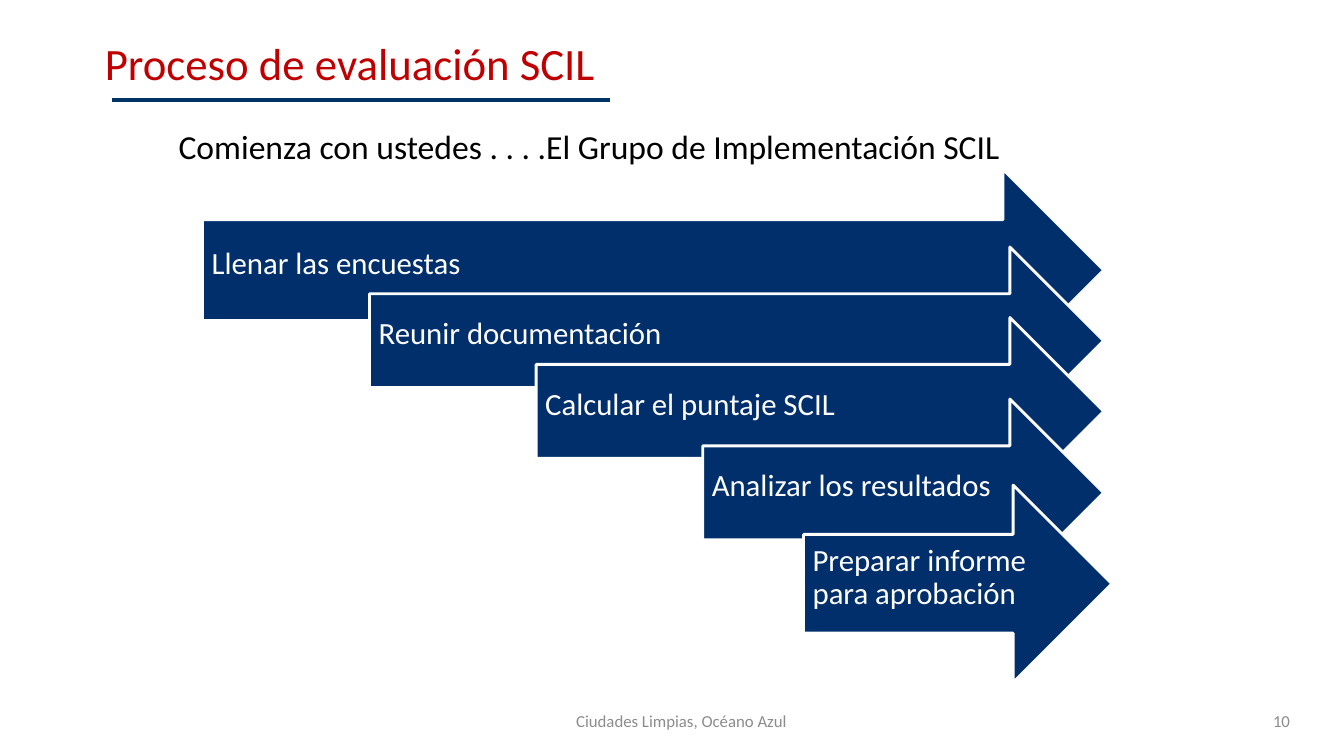
from pptx import Presentation
from pptx.dml.color import RGBColor
from pptx.enum.shapes import MSO_CONNECTOR, MSO_SHAPE
from pptx.enum.text import MSO_ANCHOR, PP_ALIGN
from pptx.oxml.ns import qn
from pptx.util import Pt

LEFT, CENTER = PP_ALIGN.LEFT, PP_ALIGN.CENTER
TOP, MIDDLE = MSO_ANCHOR.TOP, MSO_ANCHOR.MIDDLE
COLORS = {"title": "C00000", "rule": "003366", "arrow": "002F6C",
          "white": "FFFFFF", "body": "000000", "footer": "8C8C8C"}


def color(name):
    return RGBColor.from_string(COLORS[name])


def write(shape, text, size, color_name, align=LEFT, anchor=TOP, spacing=1.0):
    frame = shape.text_frame
    frame.word_wrap = True
    frame.vertical_anchor = anchor
    paragraph = frame.paragraphs[0]
    paragraph.text = text
    paragraph.alignment = align
    paragraph.line_spacing = spacing
    for attribute, value in {"name": "Calibri", "size": Pt(size)}.items():
        setattr(paragraph.font, attribute, value)
    paragraph.font.color.rgb = color(color_name)


presentation = Presentation()
presentation.slide_width, presentation.slide_height = Pt(960), Pt(540)
slide = presentation.slides.add_slide(presentation.slide_layouts[5])

title = slide.shapes.title
title.left, title.top, title.width, title.height = Pt(67.7), Pt(26.6), Pt(649.4), Pt(72.7)
write(title, "Proceso de evaluación SCIL", 32, "title", spacing=0.9)

title_rule = slide.shapes.add_connector(
    MSO_CONNECTOR.STRAIGHT, Pt(80), Pt(71.3), Pt(435.6), Pt(71.3))
title_rule.line.color.rgb = color("rule")
title_rule.line.width = Pt(3)
title_rule._element.spPr.append(
    title_rule._element.makeelement(qn("a:effectLst"), {}))

# Each step: text, left, top, right, height
steps = [
    ("Llenar las encuestas", 144.7, 121, 788.4, 144),
    ("Reunir documentación", 264, 176.4, 788.4, 134),
    ("Calcular el puntaje SCIL", 383, 226.8, 788.4, 134),
    ("Analizar los resultados", 502, 285, 788.4, 134),
    ("Preparar informe para aprobación", 574, 346.5, 794.2, 141),
]
step_margins = {"margin_left": 6.5, "margin_top": 6.5,
                "margin_right": 20, "margin_bottom": 15}
for text, left, top, right, height in steps:
    step = slide.shapes.add_shape(
        MSO_SHAPE.RIGHT_ARROW, Pt(left), Pt(top), Pt(right - left), Pt(height))
    step.shadow.inherit = False
    step.fill.solid()
    step.fill.fore_color.rgb = color("arrow")
    step.line.color.rgb = color("white")
    step.line.width = Pt(2)
    for margin, value in step_margins.items():
        setattr(step.text_frame, margin, Pt(value))
    write(step, text, 22, "white", anchor=MIDDLE, spacing=0.9)

# Each caption: text, box, size, color, alignment, anchor
captions = [
    ("Comienza con ustedes . . . .El Grupo de Implementación SCIL",
     (120.5, 86.4, 698.4, 58.3), 24, "body", LEFT, TOP),
    ("Ciudades Limpias, Océano Azul",
     (206, 500.5, 561.6, 28.8), 12, "footer", CENTER, MIDDLE),
    ("10", (885.5, 500.5, 59.8, 28.8), 12, "footer", CENTER, MIDDLE),
]
for text, box, size, color_name, align, anchor in captions:
    caption = slide.shapes.add_textbox(*map(Pt, box))
    write(caption, text, size, color_name, align, anchor)

presentation.save("out.pptx")
